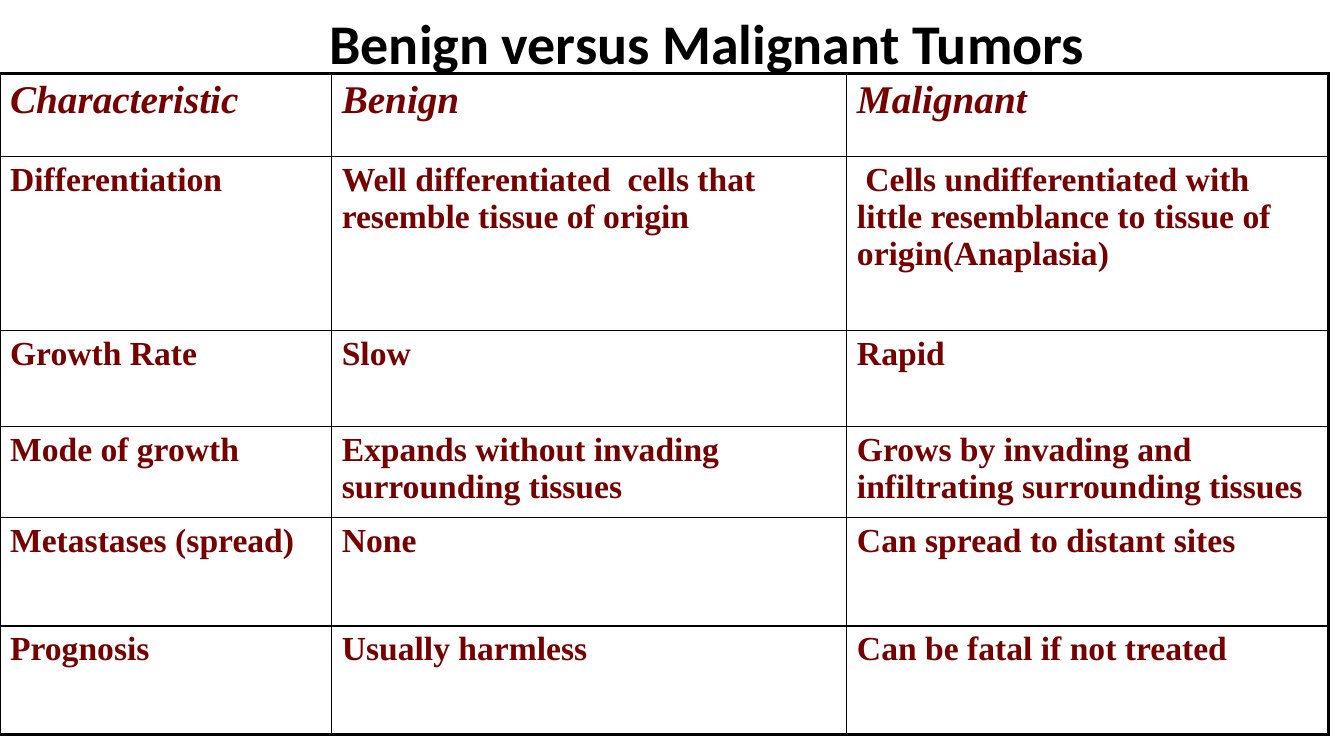
from lxml.etree import SubElement
from pptx import Presentation
from pptx.dml.color import RGBColor
from pptx.enum.text import MSO_ANCHOR
from pptx.oxml.ns import qn
from pptx.util import Inches, Pt

# Content
TITLE = "Benign versus Malignant Tumors"
ROWS = [
    ("Characteristic", "Benign", "Malignant"),
    ("Differentiation", "Well differentiated  cells that resemble tissue of origin",
     " Cells undifferentiated with little resemblance to tissue of origin(Anaplasia)"),
    ("Growth Rate", "Slow", "Rapid"),
    ("Mode of growth", "Expands without invading surrounding tissues",
     "Grows by invading and infiltrating surrounding tissues"),
    ("Metastases (spread)", "None", "Can spread to distant sites"),
    ("Prognosis", "Usually harmless", "Can be fatal if not treated"),
]
COLUMN_WIDTHS = [3.29, 5.11, 4.78]
ROW_HEIGHTS = [0.82, 1.73, 0.95, 0.88, 1.08, 1.08]
BLACK, MAROON = "000000", "760000"
OUTER_LINE, INNER_LINE = 2.25, 1


def write_text(frame, text, font="Times New Roman", size=24, color=MAROON, italic=False):
    frame.word_wrap = True
    paragraph = frame.paragraphs[0]
    run = paragraph.add_run()
    run.text = text
    run.font.name, run.font.size = font, Pt(size)
    run.font.bold, run.font.italic = True, italic
    run.font.color.rgb = RGBColor.from_string(color)
    return paragraph


def set_borders(cell, widths):
    properties = cell._tc.get_or_add_tcPr()
    for side, width in widths.items():
        line = SubElement(properties, qn(f"a:ln{side}"), w=str(Pt(width)))
        fill = SubElement(line, qn("a:solidFill"))
        SubElement(fill, qn("a:srgbClr"), val=BLACK)


presentation = Presentation()
presentation.slide_width, presentation.slide_height = Inches(13.33), Inches(7.5)
slide = presentation.slides.add_slide(presentation.slide_layouts[6])

# Title
title = slide.shapes.add_textbox(Inches(3.17), 0, Inches(8.5), Inches(0.92))
title.text_frame.vertical_anchor = MSO_ANCHOR.MIDDLE
paragraph = write_text(title.text_frame, TITLE, font="Calibri", size=40, color=BLACK)
paragraph.line_spacing = 0.9

# Comparison table
last_row, last_column = len(ROWS) - 1, len(COLUMN_WIDTHS) - 1
table = slide.shapes.add_table(
    len(ROWS), len(COLUMN_WIDTHS), 0, Inches(0.73),
    Inches(sum(COLUMN_WIDTHS)), Inches(sum(ROW_HEIGHTS))).table
table.horz_banding = False
for column, width in zip(table.columns, COLUMN_WIDTHS):
    column.width = Inches(width)
for row, height in zip(table.rows, ROW_HEIGHTS):
    row.height = Inches(height)

for row_index, texts in enumerate(ROWS):
    header = row_index == 0
    for column_index, text in enumerate(texts):
        cell = table.cell(row_index, column_index)
        write_text(cell.text_frame, text, size=28 if header else 24, italic=header)
        on_edge = {"L": column_index == 0, "R": column_index == last_column,
                   "T": header, "B": row_index == last_row}
        set_borders(cell, {side: OUTER_LINE if outer else INNER_LINE
                           for side, outer in on_edge.items()})
        cell.fill.background()

presentation.save("out.pptx")
